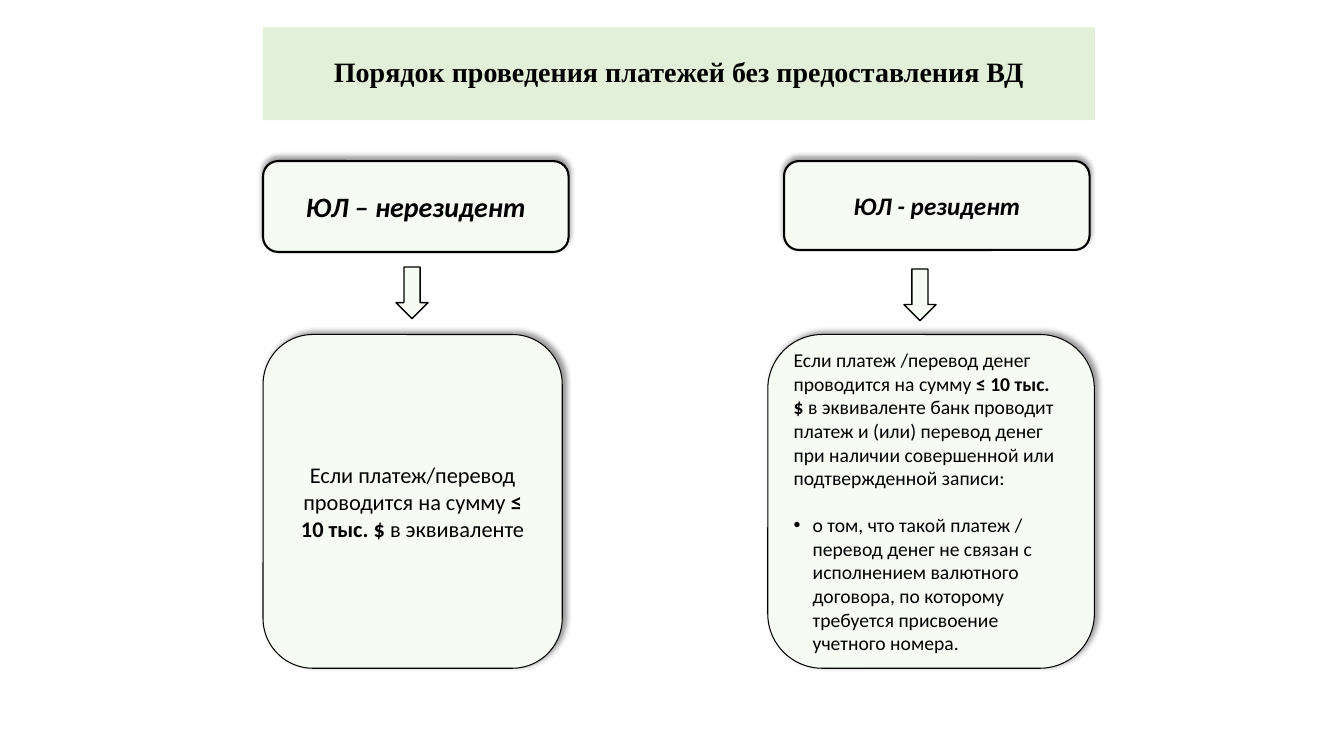
"""Build the slide on payments made without a currency contract."""
from lxml import etree
from pptx import Presentation
from pptx.dml.color import RGBColor
from pptx.enum.shapes import MSO_SHAPE
from pptx.enum.text import MSO_ANCHOR, PP_ALIGN
from pptx.oxml.ns import qn
from pptx.util import Cm, Pt

ROUNDED, ARROW = MSO_SHAPE.ROUNDED_RECTANGLE, MSO_SHAPE.DOWN_ARROW
MIDDLE = MSO_ANCHOR.MIDDLE
LEFT, CENTER = PP_ALIGN.LEFT, PP_ALIGN.CENTER
BLACK, PALE, GREEN = "000000", "F6FBF3", "E2F0D9"
UP, UP_RIGHT = 270, 315
HANGING = 0.48

TITLE = "Порядок проведения платежей без предоставления ВД"
TITLE_BOX = (6.63, 0.69, 20.96, 2.34)

HEADINGS = [
    ("ЮЛ – нерезидент", 20, (6.63, 4.06, 7.7, 2.29)),
    ("ЮЛ - резидент", 18, (19.76, 4.06, 7.7, 2.24)),
]
ARROWS = [(9.98, 6.73, 0.81, 1.3), (22.78, 6.78, 0.81, 1.3)]

NONRESIDENT = [
    [("Если платеж/перевод", False)],
    [("проводится на сумму ", False), ("≤ 10 тыс. $ ", True), ("в эквиваленте", False)],
]
RESIDENT = [
    [("Если платеж /перевод денег проводится на сумму ", False),
     ("≤ 10 тыс. $ ", True),
     ("в эквиваленте банк проводит платеж и (или) перевод денег при наличии "
      "совершенной или подтвержденной записи:", False)],
]
RECORD = ("о том, что такой платеж / перевод денег не связан с исполнением валютного "
          "договора, по которому требуется присвоение учетного номера.")
DETAILS = [
    (NONRESIDENT, None, 16, CENTER, (0.38, 0.38), (6.63, 8.43, 7.54, 8.41)),
    (RESIDENT, RECORD, 14, LEFT, (0.25, 0.46), (19.35, 8.43, 8.23, 8.41)),
]


def color(value):
    return RGBColor.from_string(value)


def set_values(target, values):
    for name, value in values.items():
        setattr(target, name, value)


def add_run(paragraph, text, size, bold=False, italic=False, name="Calibri"):
    run = paragraph.add_run()
    run.text = text
    set_values(run.font, {"size": Pt(size), "bold": bold, "italic": italic, "name": name})
    run.font.color.rgb = color(BLACK)


def add_shadow(shape, direction):
    effects = shape._element.spPr.find(qn("a:effectLst"))
    shadow = etree.SubElement(effects, qn("a:outerShdw"), blurRad=str(Pt(4)), dist=str(Pt(3)),
                              dir=str(direction * 60000), algn="ctr", rotWithShape="0")
    tint = etree.SubElement(shadow, qn("a:srgbClr"), val=BLACK)
    etree.SubElement(tint, qn("a:alpha"), val="40000")


def add_outlined(slide, kind, box, line_width, shadow_direction=None):
    shape = slide.shapes.add_shape(kind, *map(Cm, box))
    shape.fill.solid()
    shape.fill.fore_color.rgb = color(PALE)
    shape.line.color.rgb = color(BLACK)
    shape.line.width = Pt(line_width)
    shape.shadow.inherit = False
    if shadow_direction is not None:
        add_shadow(shape, shadow_direction)
    return shape


def add_bullet(frame, text, size):
    paragraph = frame.add_paragraph()
    properties = paragraph._p.get_or_add_pPr()
    properties.set("marL", str(Cm(HANGING)))
    properties.set("indent", str(-Cm(HANGING)))
    etree.SubElement(properties, qn("a:buFont"), typeface="Arial")
    etree.SubElement(properties, qn("a:buChar"), char="•")
    set_values(paragraph, {"alignment": LEFT, "space_before": Pt(17)})
    add_run(paragraph, text, size)


def add_title(slide):
    title = slide.shapes.title
    set_values(title, dict(zip(("left", "top", "width", "height"), map(Cm, TITLE_BOX))))
    title.fill.solid()
    title.fill.fore_color.rgb = color(GREEN)
    frame = title.text_frame
    set_values(frame, {"word_wrap": False, "vertical_anchor": MIDDLE, "margin_left": 0,
                       "margin_right": 0, "margin_top": 0, "margin_bottom": 0})
    paragraph = frame.paragraphs[0]
    set_values(paragraph, {"alignment": CENTER, "line_spacing": 0.9})
    add_run(paragraph, TITLE, 20, bold=True, name="Times New Roman")


def add_heading(slide, text, size, box):
    frame = add_outlined(slide, ROUNDED, box, 1.5, UP).text_frame
    set_values(frame, {"word_wrap": False, "vertical_anchor": MIDDLE})
    paragraph = frame.paragraphs[0]
    paragraph.alignment = CENTER
    add_run(paragraph, text, size, bold=True, italic=True)


def add_detail(slide, paragraphs, bullet, size, alignment, margins, box):
    frame = add_outlined(slide, ROUNDED, box, 0.75, UP_RIGHT).text_frame
    set_values(frame, {"word_wrap": True, "vertical_anchor": MIDDLE,
                       "margin_left": Cm(margins[0]), "margin_right": Cm(margins[1])})
    for index, runs in enumerate(paragraphs):
        paragraph = frame.add_paragraph() if index else frame.paragraphs[0]
        paragraph.alignment = alignment
        for text, bold in runs:
            add_run(paragraph, text, size, bold)
    if bullet:
        add_bullet(frame, bullet, size)


def main():
    presentation = Presentation()
    set_values(presentation, {"slide_width": Cm(33.87), "slide_height": Cm(19.05)})
    slide = presentation.slides.add_slide(presentation.slide_layouts[5])
    add_title(slide)
    for heading in HEADINGS:
        add_heading(slide, *heading)
    for detail in DETAILS:
        add_detail(slide, *detail)
    for box in ARROWS:
        add_outlined(slide, ARROW, box, 1)
    presentation.save("out.pptx")


if __name__ == "__main__":
    main()
